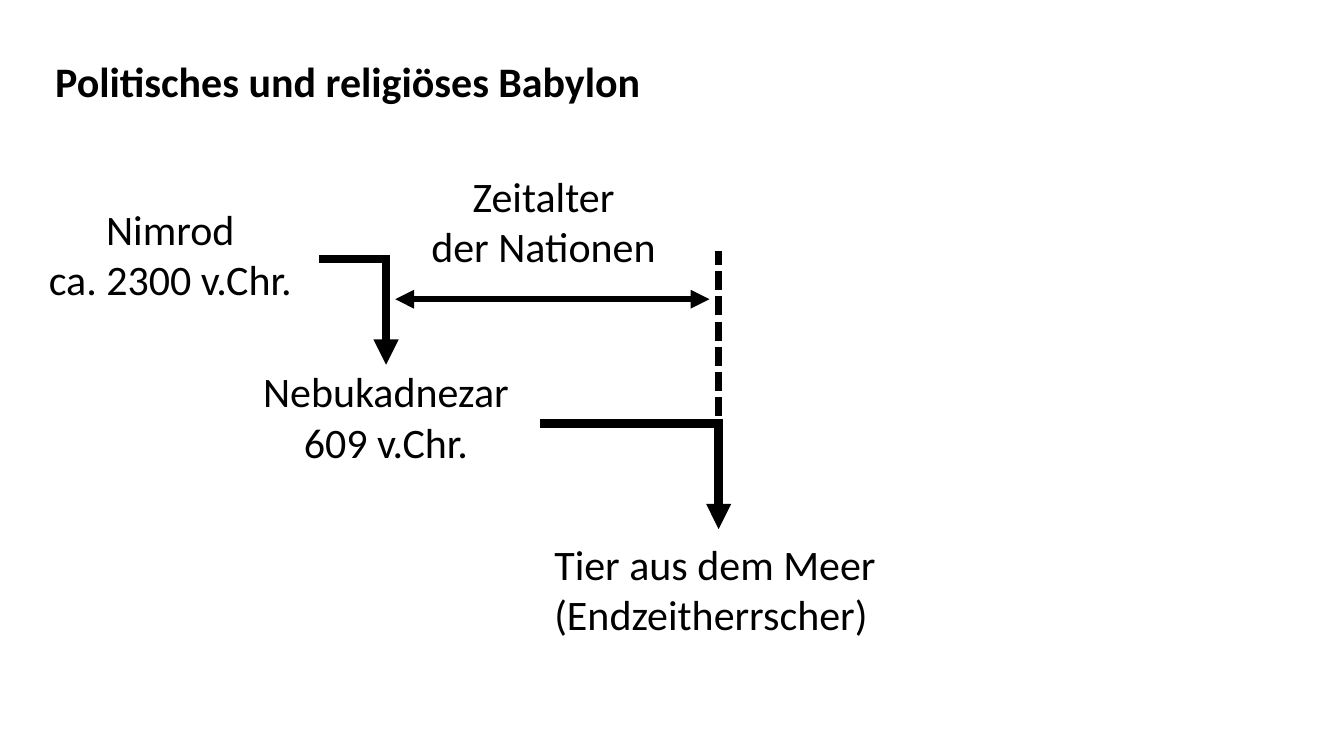
from dataclasses import dataclass

from lxml.etree import SubElement
from pptx import Presentation
from pptx.dml.color import RGBColor
from pptx.enum.dml import MSO_LINE
from pptx.enum.shapes import MSO_CONNECTOR
from pptx.enum.text import MSO_AUTO_SIZE, PP_ALIGN
from pptx.oxml.ns import qn
from pptx.shapes.shapetree import GroupShapes, SlideShapes
from pptx.util import Cm, Pt


@dataclass(frozen=True)
class Theme:
    """Colours, font and sizes of the slide."""
    ink: RGBColor = RGBColor(0, 0, 0)
    font: str = "Calibri"
    text_size: float = 30
    thick: float = 6
    thin: float = 4.5


@dataclass(frozen=True)
class Label:
    """A block of text lines, measured in centimetres."""
    lines: tuple[str, ...]
    left: float
    top: float
    width: float
    height: float = 2.82
    align: PP_ALIGN = PP_ALIGN.CENTER
    bold: bool = False


@dataclass(frozen=True)
class Stroke:
    """A straight line, measured in centimetres."""
    start: tuple[float, float]
    end: tuple[float, float]
    weight: float
    arrow_ends: tuple[str, ...] = ()
    dash: MSO_LINE | None = None


@dataclass(frozen=True)
class Succession:
    """A step from one ruler down to the next, measured in centimetres."""
    start_x: float
    corner_x: float
    corner_y: float


THEME = Theme()
DROP = 2.66
OVERLAP = 0.1

LABELS = (
    Label(("Politisches und religiöses Babylon",), 1.14, 1.27, 15.44, 1.55, PP_ALIGN.LEFT, True),
    Label(("Nimrod", "ca. 2300 v.Chr."), 0.94, 5.0, 6.71),
    Label(("Tier aus dem Meer", "(Endzeitherrscher)"), 13.72, 13.44, 8.94, align=PP_ALIGN.LEFT),
    Label(("Nebukadnezar", "609 v.Chr."), 6.35, 9.09, 6.76),
    Label(("Zeitalter", "der Nationen"), 10.59, 4.17, 6.22),
)
SUCCESSIONS = (Succession(8.03, 9.73, 6.53), Succession(13.61, 18.11, 10.67))
AGE_OF_NATIONS = Stroke((9.96, 7.54), (17.88, 7.54), THEME.thin, ("a:headEnd", "a:tailEnd"))
END_OF_AGE = Stroke((18.11, 10.49), (18.11, 6.32), THEME.thin, dash=MSO_LINE.SQUARE_DOT)


def draw_label(shapes: SlideShapes, label: Label) -> None:
    """Write one label, a paragraph for each line."""
    box = shapes.add_textbox(Cm(label.left), Cm(label.top), Cm(label.width), Cm(label.height))
    frame = box.text_frame
    frame.word_wrap = False
    frame.auto_size = MSO_AUTO_SIZE.SHAPE_TO_FIT_TEXT
    for index, line in enumerate(label.lines):
        paragraph = frame.add_paragraph() if index else frame.paragraphs[0]
        paragraph.alignment = label.align
        run = paragraph.add_run()
        run.text = line
        run.font.name = THEME.font
        run.font.size = Pt(THEME.text_size)
        run.font.bold = label.bold
        run.font.color.rgb = THEME.ink


def draw_stroke(shapes: SlideShapes | GroupShapes, stroke: Stroke) -> None:
    """Draw one line with its dash and arrowheads."""
    connector = shapes.add_connector(
        MSO_CONNECTOR.STRAIGHT, *map(Cm, stroke.start), *map(Cm, stroke.end)
    )
    line = connector.line
    line.color.rgb = THEME.ink
    line.width = Pt(stroke.weight)
    if stroke.dash is not None:
        line.dash_style = stroke.dash
    properties = connector._element.spPr
    for arrow_end in stroke.arrow_ends:
        SubElement(properties.find(qn("a:ln")), qn(arrow_end), type="triangle")
    SubElement(properties, qn("a:effectLst"))


def draw_succession(shapes: SlideShapes, step: Succession) -> None:
    """Draw a grouped angle: an arrow downwards and the bar leading to it."""
    group = shapes.add_group_shape().shapes
    x, y = step.corner_x, step.corner_y
    draw_stroke(group, Stroke((x, y - OVERLAP), (x, y + DROP), THEME.thick, ("a:tailEnd",)))
    draw_stroke(group, Stroke((x + OVERLAP, y), (step.start_x, y), THEME.thick))


def main() -> None:
    """Build the slide and save it."""
    presentation = Presentation()
    presentation.slide_width = Cm(33.87)
    presentation.slide_height = Cm(19.05)
    shapes = presentation.slides.add_slide(presentation.slide_layouts[6]).shapes
    for label in LABELS:
        draw_label(shapes, label)
    for step in SUCCESSIONS:
        draw_succession(shapes, step)
    for stroke in (AGE_OF_NATIONS, END_OF_AGE):
        draw_stroke(shapes, stroke)
    presentation.save("out.pptx")


if __name__ == "__main__":
    main()
